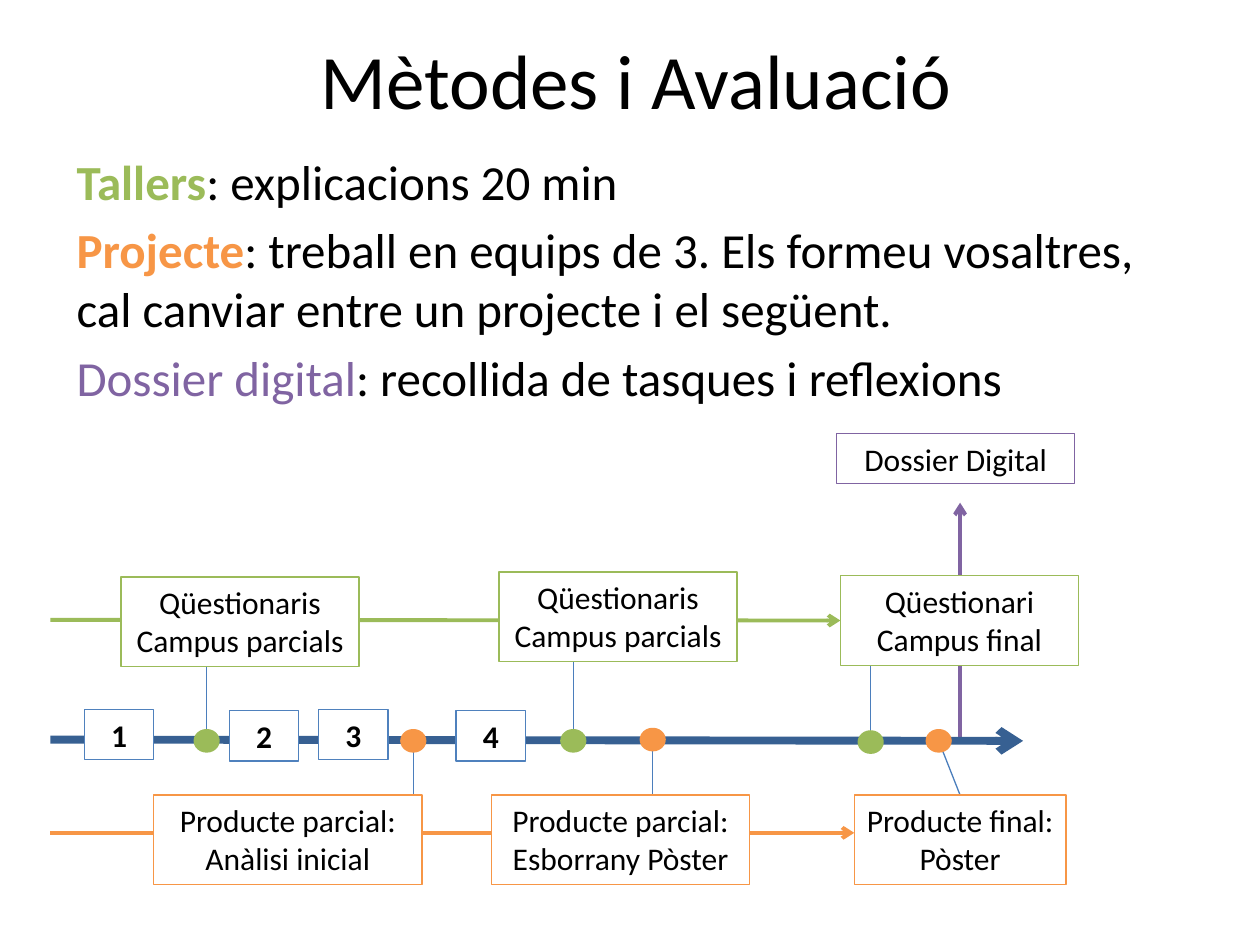
from lxml.etree import SubElement
from pptx import Presentation
from pptx.dml.color import RGBColor as RGB
from pptx.enum.shapes import MSO_CONNECTOR as LINE, MSO_SHAPE as FORM
from pptx.enum.text import MSO_ANCHOR as ANCHOR, PP_ALIGN as ALIGN
from pptx.oxml.ns import qn
from pptx.util import Inches, Pt

FONT = "Calibri"
HUES = {
    "green": "9BBB59", "orange": "F79646", "purple": "8064A2",
    "blue": "4F81BD", "navy": "376092", "link": "4B7EBC",
    "black": "000000", "white": "FFFFFF",
}


def hue(name):
    return RGB.from_string(HUES[name])


def style(run, size, color="black", bold=False):
    font = run.font
    font.name, font.size, font.bold = FONT, Pt(size), bold
    font.color.rgb = hue(color)


def add_line(slide, start, end, color, width=0.75, arrow=False):
    ends = [Inches(v) for v in (*start, *end)]
    line = slide.shapes.add_connector(LINE.STRAIGHT, *ends)
    line.line.color.rgb = hue(color)
    line.line.width = Pt(width)
    if arrow:
        SubElement(line.line._get_or_add_ln(), qn("a:tailEnd"), type="arrow")
    SubElement(line._element.spPr, qn("a:effectLst"))
    return line


def add_form(slide, form, area, fill, edge, width):
    shape = slide.shapes.add_shape(form, *[Inches(v) for v in area])
    shape.shadow.inherit = False
    shape.fill.solid()
    shape.fill.fore_color.rgb = hue(fill)
    shape.line.color.rgb = hue(edge)
    shape.line.width = Pt(width)
    return shape


def add_box(slide, text, area, edge, bold=False):
    box = add_form(slide, FORM.RECTANGLE, area, "white", edge, 0.75)
    frame = box.text_frame
    frame.word_wrap = True
    frame.vertical_anchor = ANCHOR.TOP
    frame.text = text
    for para in frame.paragraphs:
        para.alignment = ALIGN.CENTER
        style(para.runs[0], 18, bold=bold)
    return box


def add_dot(slide, x, y, color):
    area = (x - 0.09, y - 0.08, 0.18, 0.16)
    add_form(slide, FORM.OVAL, area, color, color, 2)


def add_text(slide, area):
    frame = slide.shapes.add_textbox(*[Inches(v) for v in area]).text_frame
    frame.word_wrap = True
    return frame


def add_title(slide, text):
    frame = add_text(slide, (0.55, 0, 9, 1.25))
    frame.vertical_anchor = ANCHOR.MIDDLE
    frame.text = text
    para = frame.paragraphs[0]
    para.alignment = ALIGN.CENTER
    style(para.runs[0], 44)


def add_body(slide, items):
    frame = add_text(slide, (0.51, 1.15, 9, 3.18))
    frame.text = "\n".join(term for term, *_ in items)
    for para, (_, rest, color, bold) in zip(frame.paragraphs, items):
        para.space_before = Pt(5.6)
        style(para.runs[0], 28, color, bold)
        run = para.add_run()
        run.text = rest
        style(run, 28)


def main():
    deck = Presentation()
    deck.slide_width, deck.slide_height = Inches(10), Inches(7.5)
    slide = deck.slides.add_slide(deck.slide_layouts[6])

    # Arrows that run behind the boxes
    add_line(slide, (7.62, 5.88), (7.62, 3.99), "purple", 2.25, True)
    add_line(slide, (0.4, 6.61), (6.78, 6.61), "orange", 2.25, True)
    quiz = add_line(slide, (0.4, 4.92), (6.67, 4.92), "green", 2.25, True)

    # Title and explanation
    add_title(slide, "Mètodes i Avaluació")
    add_body(slide, [
        ("Tallers", ": explicacions 20 min", "green", True),
        ("Projecte", ": treball en equips de 3. Els formeu vosaltres, "
         "cal canviar entre un projecte i el següent.", "orange", True),
        ("Dossier digital", ": recollida de tasques i reflexions",
         "purple", False),
    ])

    # Time axis
    add_line(slide, (0.4, 5.87), (8.12, 5.88), "navy", 4.5, True)

    # Links from the boxes to the axis
    for x, top, low in [(1.64, 4.94, 5.88), (3.28, 6.3, 5.87),
                        (4.55, 5.25, 5.88), (5.18, 6.31, 5.88),
                        (6.91, 5.27, 5.88)]:
        add_line(slide, (x, top), (x, low), "link")
    last = add_line(slide, (7.62, 6.31), (7.45, 5.88), "link")

    # Questionnaires
    for x, y in [(0.96, 4.58), (3.96, 4.54)]:
        add_box(slide, "Qüestionaris Campus parcials",
                (x, y, 1.89, 0.71), "green")
    final = add_box(slide, "Qüestionari\nCampus final",
                    (6.67, 4.57, 1.89, 0.71), "green")
    quiz.end_connect(final, 1)

    # Products
    for text, x, width in [("Producte parcial: Anàlisi inicial", 1.22, 2.13),
                           ("Producte parcial: Esborrany Pòster", 3.9, 2.05),
                           ("Producte final: Pòster", 6.78, 1.68)]:
        box = add_box(slide, text, (x, 6.31, width, 0.71), "orange")
    last.begin_connect(box, 0)

    # Digital dossier
    add_box(slide, "Dossier Digital", (6.64, 3.44, 1.89, 0.4), "purple")

    # Milestones on the axis
    for x, y, color in [(1.64, 5.88, "green"), (3.28, 5.88, "orange"),
                        (4.55, 5.88, "green"), (5.18, 5.87, "orange"),
                        (6.91, 5.89, "green"), (7.45, 5.88, "orange")]:
        add_dot(slide, x, y, color)

    # Numbered workshops
    for num, (x, y) in enumerate([(0.67, 5.63), (1.82, 5.64),
                                  (2.53, 5.63), (3.62, 5.64)], 1):
        add_box(slide, str(num), (x, y, 0.55, 0.4), "blue", True)

    deck.save("out.pptx")


if __name__ == "__main__":
    main()
